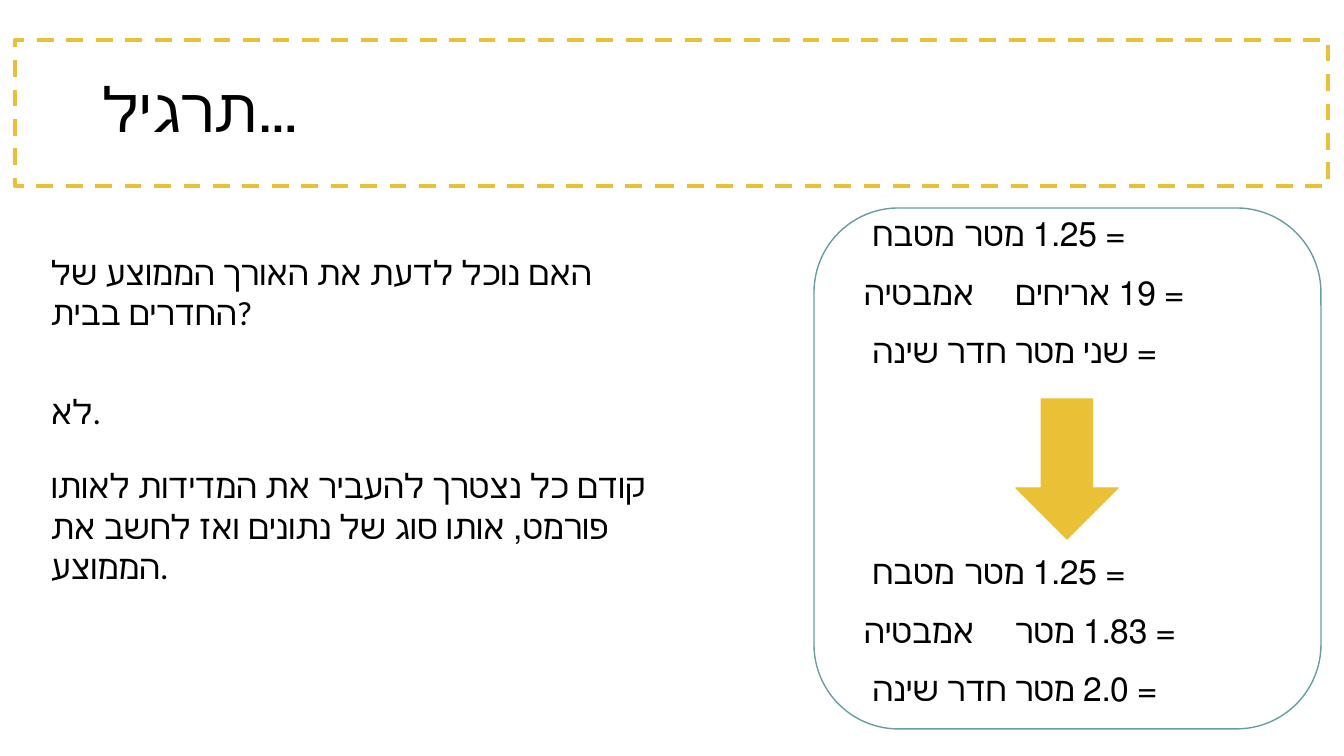
from pptx import Presentation
from pptx.dml.color import RGBColor
from pptx.enum.dml import MSO_LINE
from pptx.enum.shapes import MSO_SHAPE
from pptx.enum.text import MSO_ANCHOR, PP_ALIGN
from pptx.util import Emu, Pt

RECTANGLE = MSO_SHAPE.RECTANGLE
ROUNDED = MSO_SHAPE.ROUNDED_RECTANGLE
DOWN_ARROW = MSO_SHAPE.DOWN_ARROW
DASH = MSO_LINE.DASH
TOP, MIDDLE = MSO_ANCHOR.TOP, MSO_ANCHOR.MIDDLE
LEFT = PP_ALIGN.LEFT

EMU_PER_PX = 914400 / 100.8
PAGE_WIDTH, PAGE_HEIGHT = 1344, 756
GOLD, TEAL, BLACK = "EAC036", "6A9CA1", "000000"

QUESTION = [
    ("האם נוכל לדעת את האורך הממוצע של החדרים בבית?", 0),
    ("לא.", 42),
    ("קודם כל נצטרך להעביר את המדידות לאותו פורמט, "
     "אותו סוג של נתונים ואז לחשב את הממוצע.", 24),
]
ROOMS = ["מטבח ", "אמבטיה", "חדר שינה "]
MEASUREMENTS = {
    208: ["1.25 מטר", "19 אריחים", "שני מטר"],
    546: ["1.25 מטר", "1.83 מטר", "2.0 מטר"],
}
ROW_GAP = 13


def px(length):
    return Emu(round(length * EMU_PER_PX))


def color(hex_string):
    return RGBColor.from_string(hex_string)


class SlideBuilder:
    def __init__(self, page, font="Calibri", text_color=BLACK):
        self.page = page
        self.font = font
        self.text_color = text_color

    def shape(self, kind, left, top, width, height, line, fill=None,
              weight=1, dash=None):
        shape = self.page.shapes.add_shape(
            kind, px(left), px(top), px(width), px(height))
        shape.shadow.inherit = False
        if fill:
            shape.fill.solid()
            shape.fill.fore_color.rgb = color(fill)
        else:
            shape.fill.background()
        shape.line.color.rgb = color(line)
        shape.line.width = Pt(weight)
        if dash:
            shape.line.dash_style = dash
        return shape

    def text(self, paragraphs, left, top, width, height, size=24,
             anchor=TOP, line_spacing=1.0):
        """Add a text box; paragraphs are (text, points of space before)."""
        box = self.page.shapes.add_textbox(
            px(left), px(top), px(width), px(height))
        frame = box.text_frame
        frame.word_wrap = True
        frame.vertical_anchor = anchor
        for index, (content, gap) in enumerate(paragraphs):
            para = frame.add_paragraph() if index else frame.paragraphs[0]
            para.alignment = LEFT
            para.line_spacing = line_spacing
            if gap:
                para.space_before = Pt(gap)
            span = para.add_run()
            span.text = content
            span.font.name = self.font
            span.font.size = Pt(size)
            span.font.color.rgb = color(self.text_color)
        return box


def main():
    deck = Presentation()
    deck.slide_width, deck.slide_height = px(PAGE_WIDTH), px(PAGE_HEIGHT)
    builder = SlideBuilder(deck.slides.add_slide(deck.slide_layouts[6]))

    builder.shape(RECTANGLE, 15, 40, 1313, 146, GOLD, weight=3, dash=DASH)
    builder.text([("תרגיל…", 0)], 93, 40, 1159, 146, size=44,
                 anchor=MIDDLE, line_spacing=0.9)
    builder.text(QUESTION, 41, 247, 666, 367)

    for top, values in MEASUREMENTS.items():
        rows = [(f"{room}\t= {value}", ROW_GAP if index else 0)
                for index, (room, value) in enumerate(zip(ROOMS, values))]
        builder.text(rows, 854, top, 450, 169)

    builder.shape(DOWN_ARROW, 1016, 399, 102, 140, GOLD, fill=GOLD)
    builder.shape(ROUNDED, 814, 208, 507, 521, TEAL)
    deck.save("out.pptx")


if __name__ == "__main__":
    main()
